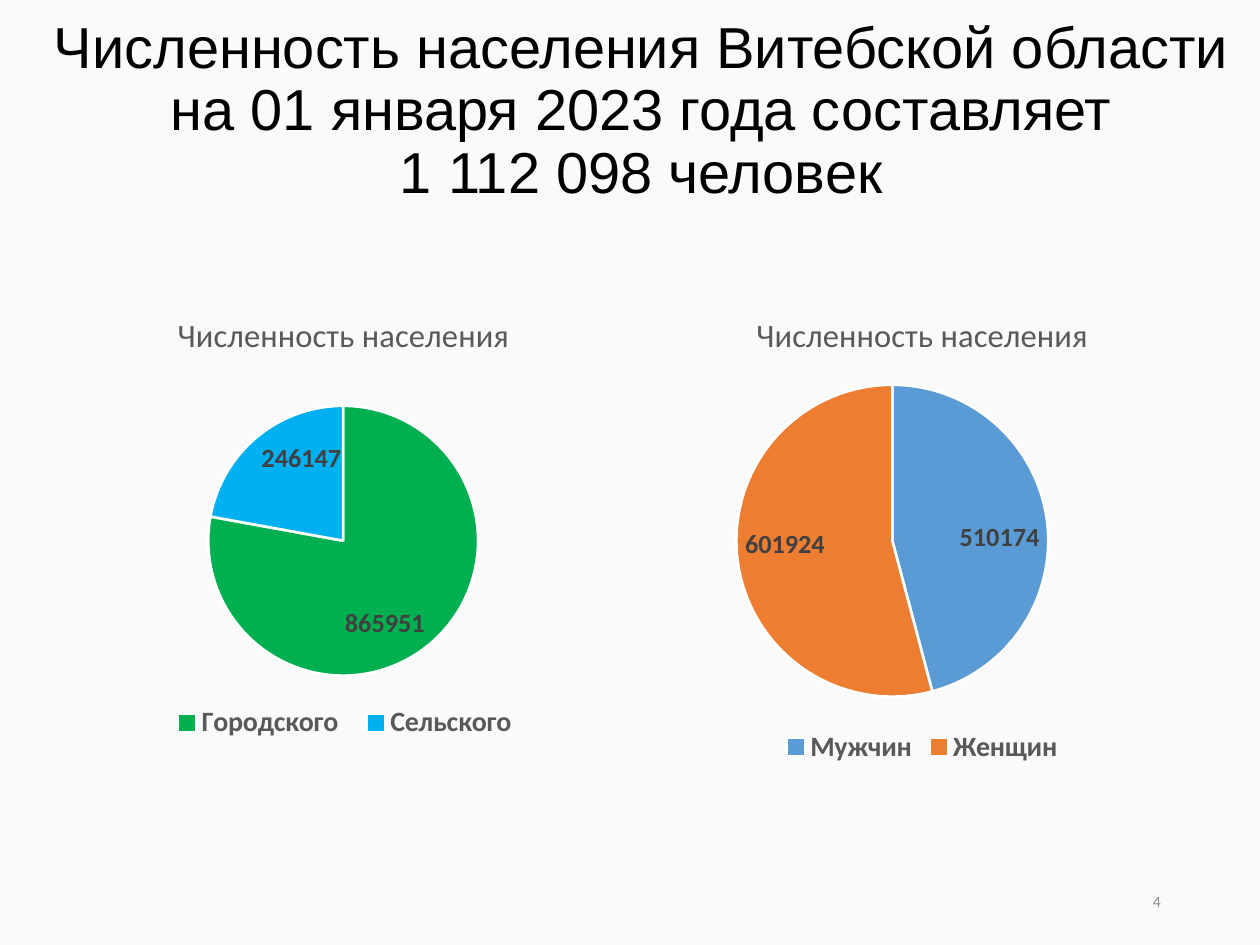
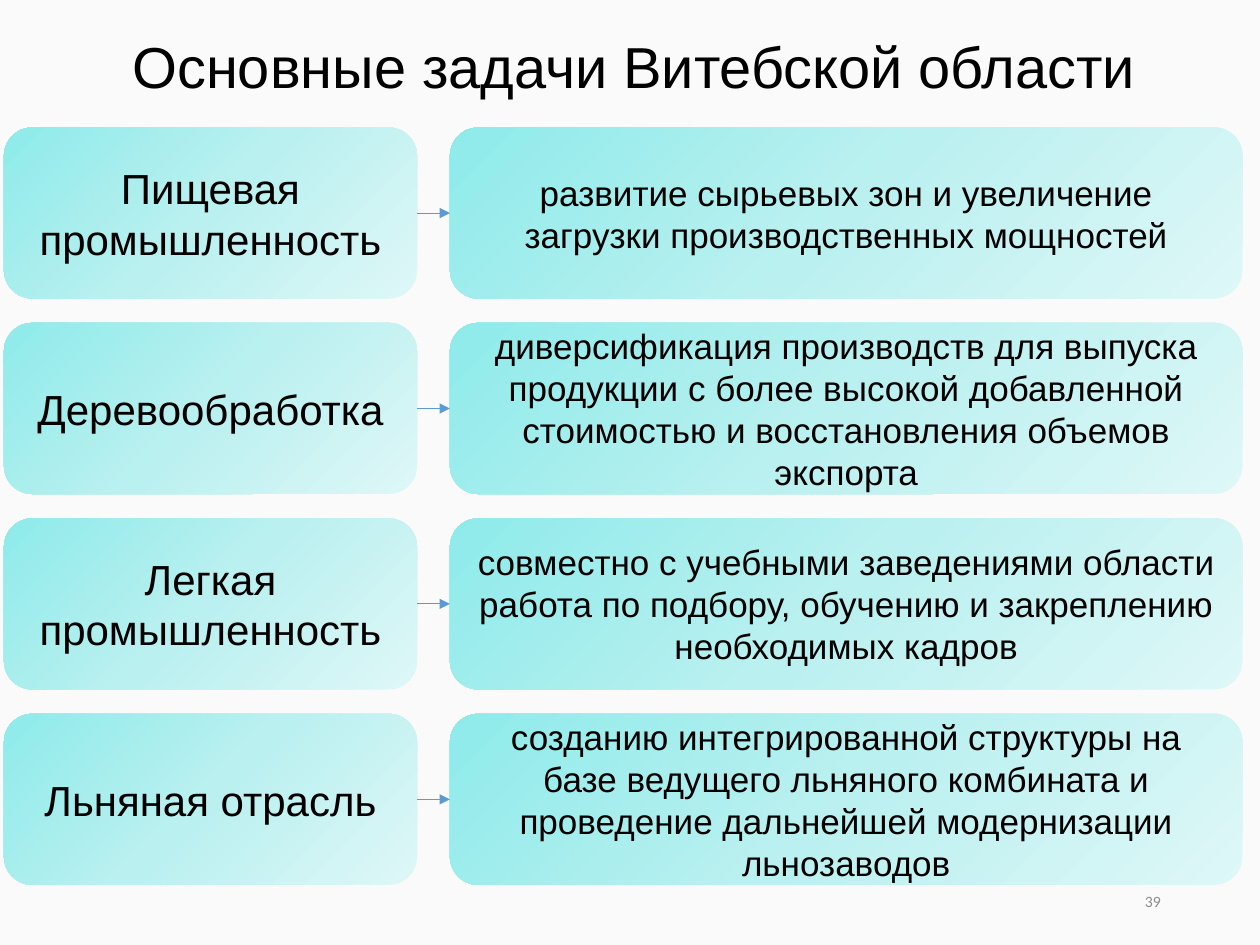
import pptx
import pptx.util
import pptx.chart.data
import pptx.dml.color
import pptx.enum.chart
import pptx.enum.shapes
import pptx.enum.text
import pptx.oxml
import pptx.oxml.ns

Cm, Pt = pptx.util.Cm, pptx.util.Pt
ALIGN = pptx.enum.text.PP_ALIGN

COLORS = {
    "background": "FAFAFA", "text": "000000", "number": "8C8C8C",
    "chart_text": "595959", "label": "404040", "white": "FFFFFF",
    "arrow": "5B9BD5", "green": "00B050", "sky": "00B0F0",
    "blue": "5B9BD5", "orange": "ED7D31",
    "card_dark": "8EEBEA", "card_mid": "BBF0F0", "card_light": "DEF7F7",
}
CARD_STOPS = [(0, "card_dark"), (50, "card_mid"), (100, "card_light")]
NUMBER_BOX = (17.93, 17.65, 5.72, 1.02)

POPULATION_TITLE = ("Численность населения Витебской области\v"
                    "на 01 января 2023 года составляет\v1 112 098 человек")
CHART_TITLE = "Численность населения"
# Boxes are left, top, width, height in cm; a pie is centre x, centre y, diameter.
PIES = [
    {"box": (1.42, 5.84, 11.02, 9.68), "pie": (6.92, 10.9, 5.44),
     "slices": [("Городского", 865951, "green"), ("Сельского", 246147, "sky")],
     "legend": (3.2, 14.15, 7.5, 0.85)},
    {"box": (12.93, 5.84, 11.33, 9.68), "pie": (17.99, 10.9, 6.29),
     "slices": [("Мужчин", 510174, "blue"), ("Женщин", 601924, "orange")],
     "legend": None},
]

TASKS_TITLE = "Основные задачи Витебской области"
TASKS = [
    ("Пищевая промышленность",
     "развитие сырьевых зон и увеличение загрузки производственных мощностей"),
    ("Деревообработка",
     "диверсификация производств для выпуска продукции с более высокой "
     "добавленной стоимостью и восстановления объемов экспорта"),
    ("Легкая промышленность",
     "совместно с учебными заведениями области работа по подбору, обучению "
     "и закреплению необходимых кадров"),
    ("Льняная отрасль",
     "созданию интегрированной структуры на базе ведущего льняного комбината "
     "и проведение дальнейшей модернизации льнозаводов"),
]
ROW_TOP, ROW_STEP, CARD_HEIGHT = 2.57, 3.94, 3.45
BRANCH_LEFT, BRANCH_WIDTH = 0.08, 8.33
TASK_LEFT, TASK_WIDTH = 9.07, 15.98


def rgb(name):
    return pptx.dml.color.RGBColor.from_string(COLORS[name])


def cm(values):
    return [Cm(v) for v in values]


def set_font(font, size, color, bold=False, name="Calibri"):
    font.size, font.bold, font.name = Pt(size), bold, name
    font.color.rgb = rgb(color)


def write(sp, text, size, color="text", font="Arial", align=ALIGN.CENTER, spacing=None):
    tf = sp.text_frame
    tf.word_wrap = True
    tf.vertical_anchor = pptx.enum.text.MSO_ANCHOR.MIDDLE
    p = tf.paragraphs[0]
    p.text = text
    p.alignment = align
    p.line_spacing = spacing
    for r in p.runs:
        set_font(r.font, size, color, name=font)


def add_text(s, box, text, size, **fmt):
    write(s.shapes.add_textbox(*cm(box)), text, size, **fmt)


def add_slide(prs, title, title_box, spacing, number):
    s = prs.slides.add_slide(prs.slide_layouts[6])
    s.background.fill.solid()
    s.background.fill.fore_color.rgb = rgb("background")
    add_text(s, title_box, title, 33, spacing=spacing)
    add_text(s, NUMBER_BOX, number, 9, color="number", font="Calibri", align=ALIGN.RIGHT)
    return s


def add_card(s, box, text, size):
    sp = s.shapes.add_shape(pptx.enum.shapes.MSO_SHAPE.ROUNDED_RECTANGLE, *cm(box))
    sp.shadow.inherit = False
    sp.line.fill.background()
    sp.fill.gradient()
    stops = "".join(f'<a:gs pos="{pos * 1000}"><a:srgbClr val="{COLORS[c]}"/></a:gs>'
                    for pos, c in CARD_STOPS)
    gradient = pptx.oxml.parse_xml(
        f'<a:gradFill {pptx.oxml.ns.nsdecls("a")} rotWithShape="1"><a:gsLst>{stops}</a:gsLst>'
        '<a:path path="circle"><a:fillToRect r="100000" b="100000"/></a:path></a:gradFill>')
    spPr = sp.element.spPr
    spPr.replace(spPr.find(pptx.oxml.ns.qn("a:gradFill")), gradient)
    write(sp, text, size)
    return sp


def add_arrow(s, start, end):
    """Join the right side of start to the left side of end."""
    line = s.shapes.add_connector(pptx.enum.shapes.MSO_CONNECTOR.STRAIGHT, 0, 0, 0, 0)
    line.begin_connect(start, 3)
    line.end_connect(end, 1)
    line.line.color.rgb = rgb("arrow")
    line.line.width = Pt(0.5)
    ns = pptx.oxml.ns.nsdecls("a")
    line.line._get_or_add_ln().append(pptx.oxml.parse_xml(f'<a:tailEnd {ns} type="triangle"/>'))
    line._element.spPr.append(pptx.oxml.parse_xml(f'<a:effectLst {ns}/>'))


def manual_layout(chart_box, box, inner=False):
    """Layout element placing box (cm on the slide) inside the chart."""
    left, top, width, height = chart_box
    x, y, w, h = box
    parts = [("layoutTarget", "inner")] if inner else []
    parts += [("xMode", "edge"), ("yMode", "edge"),
              ("x", round((x - left) / width, 3)), ("y", round((y - top) / height, 3)),
              ("w", round(w / width, 3)), ("h", round(h / height, 3))]
    body = "".join(f'<c:{tag} val="{val}"/>' for tag, val in parts)
    return pptx.oxml.parse_xml(f'<c:layout {pptx.oxml.ns.nsdecls("c")}>'
                               f'<c:manualLayout>{body}</c:manualLayout></c:layout>')


def add_pie(s, box, pie, slices, legend):
    names, values, colors = zip(*slices)
    data = pptx.chart.data.CategoryChartData()
    data.categories = names
    data.add_series(CHART_TITLE, values)
    chart = s.shapes.add_chart(pptx.enum.chart.XL_CHART_TYPE.PIE, *cm(box), data).chart
    set_font(chart.font, 10, "text")
    chart.has_title = True
    chart.chart_title.include_in_layout = False
    p = chart.chart_title.text_frame.paragraphs[0]
    p.text = CHART_TITLE
    set_font(p.runs[0].font, 18.6, "chart_text")

    chart.has_legend = True
    chart.legend.position = pptx.enum.chart.XL_LEGEND_POSITION.BOTTOM
    chart.legend.include_in_layout = False
    set_font(chart.legend.font, 16, "chart_text", bold=True)

    plot = chart.plots[0]
    plot.vary_by_categories = True
    for i, color in enumerate(colors):
        fmt = plot.series[0].points[i].format
        fmt.fill.solid()
        fmt.fill.fore_color.rgb = rgb(color)
        fmt.line.color.rgb = rgb("white")
        fmt.line.width = Pt(1.5)
    labels = plot.series[0].data_labels
    labels.show_value = True
    labels.position = pptx.enum.chart.XL_LABEL_POSITION.INSIDE_END
    set_font(labels.font, 15, "label", bold=True)

    qn = pptx.oxml.ns.qn
    cx, cy, d = pie
    area = chart._chartSpace.chart.plotArea
    for old in area.findall(qn("c:layout")):
        area.remove(old)
    area.insert(0, manual_layout(box, (cx - d / 2, cy - d / 2, d, d), inner=True))
    if legend:
        element = chart.legend._element
        for old in element.findall(qn("c:layout")):
            element.remove(old)
        element.find(qn("c:legendPos")).addnext(manual_layout(box, legend))


def main():
    prs = pptx.Presentation()
    prs.slide_width, prs.slide_height = Cm(25.4), Cm(19.05)

    s = add_slide(prs, POPULATION_TITLE, (0.46, 0, 24.94, 4.52), 0.9, "4")
    for pie in PIES:
        add_pie(s, **pie)

    s = add_slide(prs, TASKS_TITLE, (0.08, 0.69, 25.4, 1.5), 0.8, "39")
    for i, (branch, task) in enumerate(TASKS):
        top = ROW_TOP + i * ROW_STEP
        start = add_card(s, (BRANCH_LEFT, top, BRANCH_WIDTH, CARD_HEIGHT), branch, 24)
        end = add_card(s, (TASK_LEFT, top, TASK_WIDTH, CARD_HEIGHT), task, 20)
        add_arrow(s, start, end)

    prs.save("out.pptx")


if __name__ == "__main__":
    main()
